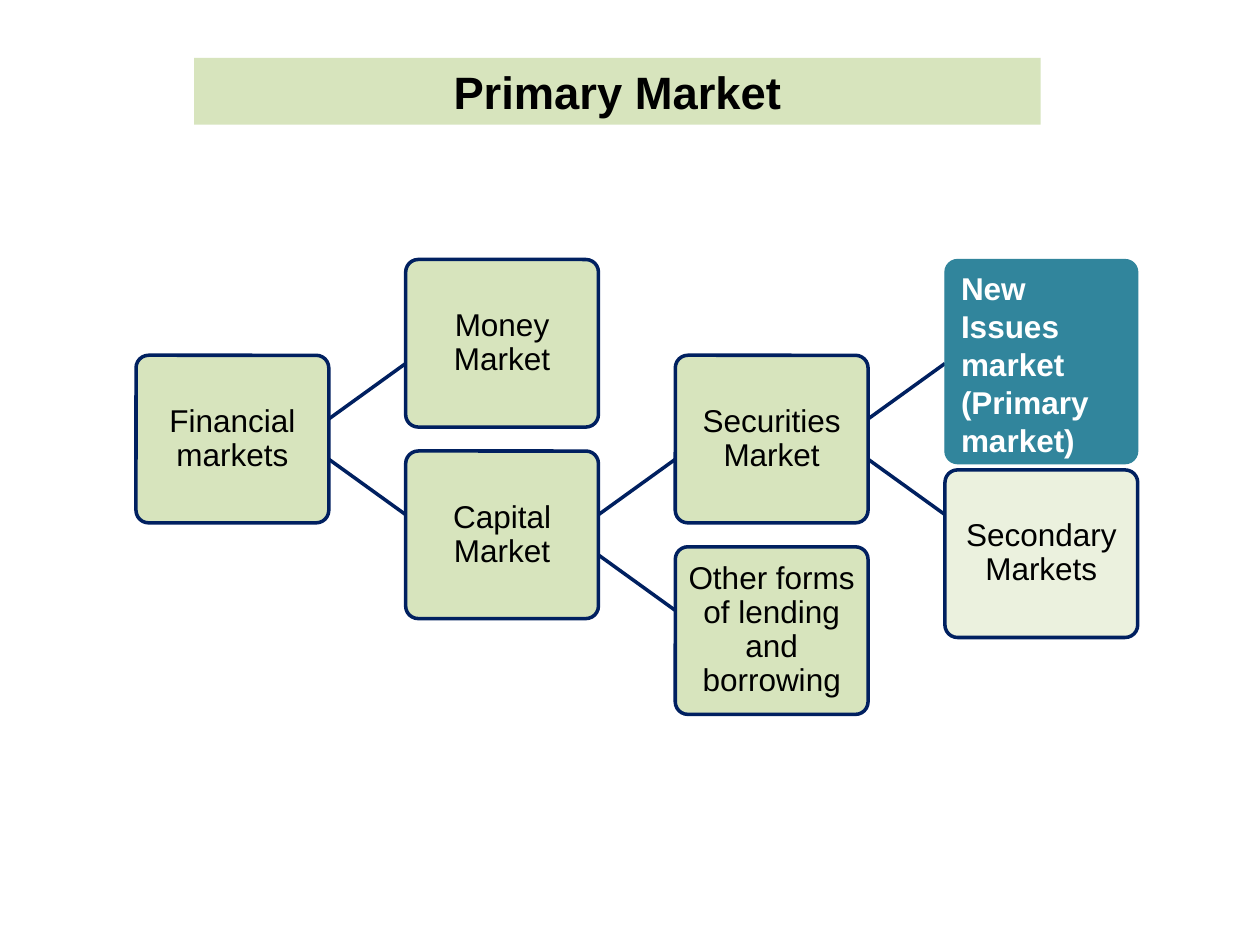
import pptx
import pptx.util
import pptx.dml.color
import pptx.enum.shapes
import pptx.enum.text
import pptx.oxml
import pptx.oxml.ns

Inches = pptx.util.Inches
Pt = pptx.util.Pt
ALIGN = pptx.enum.text.PP_ALIGN
ANCHOR = pptx.enum.text.MSO_ANCHOR

COLORS = {
    "green": "D7E4BD",
    "pale": "EBF1DE",
    "teal": "31859C",
    "navy": "002060",
    "black": "000000",
    "white": "FFFFFF",
}

# Tree grid: columns, and rows that step by half a box pitch
LEFT, TOP = 1.08, 2.06
COLUMN_STEP, ROW_STEP = 2.14, 0.76
BOX_WIDTH, BOX_HEIGHT = 1.53, 1.33
CORNER = 0.1
LINK_OFFSET = 0.16  # distance of a link's ends from the box centres

# (text, column, row)
GREEN_BOXES = [
    ("Financial markets", 0, 1),
    ("Money Market", 1, 0),
    ("Capital Market", 1, 2),
    ("Securities Market", 2, 1),
    ("Other forms of lending and borrowing", 2, 3),
]
# (column, row): each parent links one row up and one row down
PARENTS = [(0, 1), (1, 2), (2, 1)]


def color(name):
    return pptx.dml.color.RGBColor.from_string(COLORS[name])


def column_left(column):
    return LEFT + column * COLUMN_STEP


def row_top(row):
    return TOP + row * ROW_STEP


class MarketSlide:
    font = "Arial"
    text_size = 18
    title_size = 25.9

    def __init__(self, presentation):
        self.slide = presentation.slides.add_slide(presentation.slide_layouts[5])

    def set_text(self, shape, text, size, font_color, align, bold=False):
        frame = shape.text_frame
        frame.word_wrap = True
        frame.text = text
        paragraph = frame.paragraphs[0]
        paragraph.alignment = align
        paragraph.font.name = self.font
        paragraph.font.size = Pt(size)
        paragraph.font.bold = bold
        paragraph.font.color.rgb = color(font_color)
        return paragraph

    def title(self, text, left, top, width, height):
        shape = self.slide.shapes.title
        shape.left, shape.top = Inches(left), Inches(top)
        shape.width, shape.height = Inches(width), Inches(height)
        shape.fill.solid()
        shape.fill.fore_color.rgb = color("green")
        self.set_text(shape, text, self.title_size, "black", ALIGN.CENTER, bold=True)
        shape.text_frame.auto_size = pptx.enum.text.MSO_AUTO_SIZE.NONE
        shape.text_frame.vertical_anchor = ANCHOR.MIDDLE

    def rounded(self, left, top, height, fill, line, line_width):
        shape = self.slide.shapes.add_shape(
            pptx.enum.shapes.MSO_SHAPE.ROUNDED_RECTANGLE,
            Inches(left), Inches(top), Inches(BOX_WIDTH), Inches(height))
        shape.adjustments[0] = CORNER / min(BOX_WIDTH, height)
        shape.shadow.inherit = False
        shape.fill.solid()
        shape.fill.fore_color.rgb = color(fill)
        shape.line.color.rgb = color(line)
        shape.line.width = Pt(line_width)
        return shape

    def box(self, text, left, top, fill="green"):
        shape = self.rounded(left, top, BOX_HEIGHT, fill, "navy", 2)
        paragraph = self.set_text(shape, text, self.text_size, "black", ALIGN.CENTER)
        paragraph.line_spacing = 0.9
        frame = shape.text_frame
        frame.vertical_anchor = ANCHOR.MIDDLE
        frame.margin_left = frame.margin_right = Inches(0.03)
        frame.margin_top = frame.margin_bottom = Inches(0.03)

    def highlight(self, text, left, top, height):
        shape = self.rounded(left, top, height, "teal", "teal", 0.75)
        self.set_text(shape, text, self.text_size, "white", ALIGN.JUSTIFY, bold=True)
        frame = shape.text_frame
        frame.vertical_anchor = ANCHOR.TOP
        frame.margin_left = frame.margin_right = Inches(0.1)
        frame.margin_top = frame.margin_bottom = Inches(0.05)

    def link(self, column, row, direction):
        start_y = row_top(row) + BOX_HEIGHT / 2 + direction * LINK_OFFSET
        end_y = row_top(row + direction) + BOX_HEIGHT / 2 - direction * LINK_OFFSET
        connector = self.slide.shapes.add_connector(
            pptx.enum.shapes.MSO_CONNECTOR.STRAIGHT,
            Inches(column_left(column) + BOX_WIDTH), Inches(start_y),
            Inches(column_left(column + 1)), Inches(end_y))
        connector.line.color.rgb = color("navy")
        connector.line.width = Pt(2)
        connector._element.spPr.append(pptx.oxml.parse_xml(
            "<a:effectLst %s/>" % pptx.oxml.ns.nsdecls("a")))


def main():
    presentation = pptx.Presentation()
    presentation.slide_width = Inches(10)
    presentation.slide_height = Inches(7.5)
    market = MarketSlide(presentation)

    # Title band
    market.title("Primary Market", 1.54, 0.46, 6.72, 0.53)

    # Links
    for column, row in PARENTS:
        for direction in (-1, 1):
            market.link(column, row, direction)

    # Boxes
    for text, column, row in GREEN_BOXES:
        market.box(text, column_left(column), row_top(row))

    # Last column: a taller highlighted box pushes the lower one down
    market.highlight("New Issues market (Primary market)", column_left(3), TOP, 1.62)
    market.box("Secondary Markets", column_left(3), 3.73, fill="pale")

    presentation.save("out.pptx")


if __name__ == "__main__":
    main()
